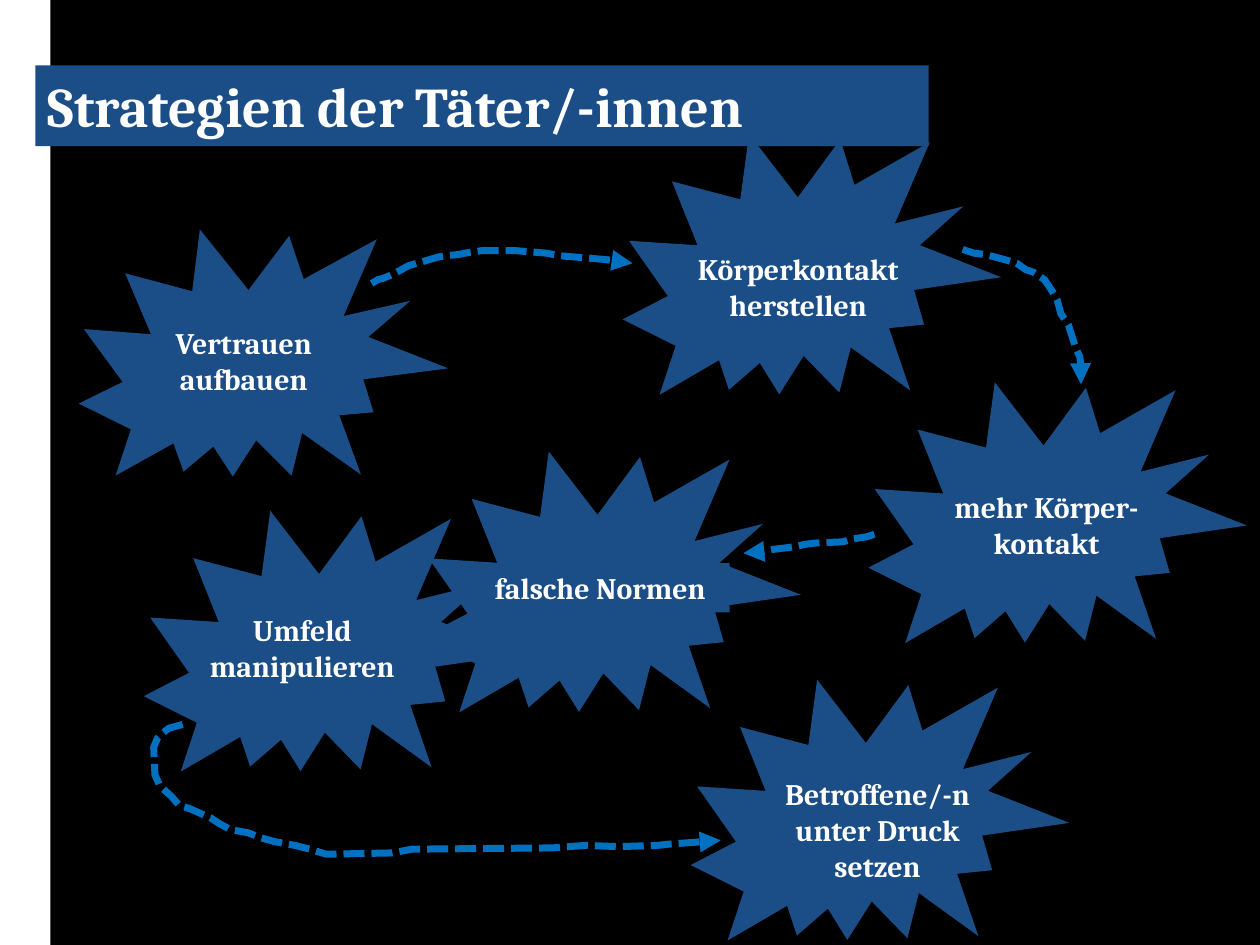
from lxml import etree
from pptx import Presentation
from pptx.dml.color import RGBColor
from pptx.enum.dml import MSO_LINE
from pptx.enum.shapes import MSO_SHAPE
from pptx.enum.text import MSO_ANCHOR, MSO_AUTO_SIZE, PP_ALIGN
from pptx.oxml.ns import qn
from pptx.util import Inches, Pt

RECT, BURST = MSO_SHAPE.RECTANGLE, MSO_SHAPE.EXPLOSION2
LEFT, CENTER = PP_ALIGN.LEFT, PP_ALIGN.CENTER
DASH = MSO_LINE.SQUARE_DOT
FONT = "Cambria"
COLORS = {"back": "000000", "white": "FFFFFF", "blue": "1B4E87", "arrow": "0070C0"}
BIG = (2.87, 2.63)
TILT = 20.4

# burst left, top, size; label text, left, top, width, height, label fill
STEPS = [
    (0.66, 1.64, (2.82, 2.48), "Vertrauen aufbauen", (0.91, 2.53, 2.05, 0.67), None),
    (4.99, 0.86, BIG, "Körperkontakt herstellen", (5.31, 1.94, 2.05, 0.67), None),
    (6.94, 2.83, BIG, "mehr Körper-kontakt", (7.28, 3.83, 2.05, 0.67), None),
    (3.4, 3.38, BIG, "falsche Normen", (3.74, 4.47, 2.05, 0.39), "blue"),
    (1.19, 3.85, BIG, "Umfeld manipulieren", (1.3, 4.81, 2.2, 0.67), None),
    (5.53, 5.19, BIG, "Betroffene/-n unter Druck setzen", (5.94, 6.11, 2.05, 0.96), None),
]

# points along each arrow, in hundredths of an inch
ARROWS = [
    [(295, 225), (300, 222), (304, 221), (309, 219), (317, 215), (324, 211),
     (331, 209), (348, 204), (354, 203), (364, 202), (369, 201), (382, 199),
     (410, 199), (434, 201), (444, 203), (480, 206), (488, 207), (502, 209)],
    [(764, 198), (773, 201), (782, 202), (797, 206), (807, 209), (814, 214),
     (820, 216), (829, 222), (835, 231), (839, 238), (842, 249), (848, 258),
     (854, 277), (857, 283), (858, 292), (858, 305)],
    [(694, 424), (688, 426), (675, 428), (669, 430), (647, 431), (639, 432),
     (630, 434), (614, 436), (605, 438), (590, 439)],
    [(145, 575), (134, 578), (129, 582), (125, 586), (122, 593), (123, 615),
     (127, 624), (136, 632), (142, 639), (151, 642), (160, 646), (167, 649),
     (173, 653), (182, 658), (186, 659), (197, 661), (207, 665), (218, 668),
     (234, 671), (246, 674), (259, 678), (311, 677), (327, 674), (438, 673),
     (465, 671), (491, 672), (522, 671), (531, 670), (559, 668), (572, 667)],
]


def rgb(name):
    return RGBColor.from_string(COLORS[name])


def add_solid(shapes, kind, box, color):
    shape = shapes.add_shape(kind, *map(Inches, box))
    shape.shadow.inherit = False
    shape.fill.solid()
    shape.fill.fore_color.rgb = rgb(color)
    shape.line.fill.background()
    return shape


def set_text(shape, text, size, align):
    frame = shape.text_frame
    frame.word_wrap = True
    frame.auto_size = MSO_AUTO_SIZE.SHAPE_TO_FIT_TEXT
    frame.vertical_anchor = MSO_ANCHOR.TOP
    frame.text = text
    line = frame.paragraphs[0]
    line.alignment = align
    font = line.runs[0].font
    font.name, font.size, font.bold = FONT, Pt(size), True
    font.color.rgb = rgb("white")


def add_step(shapes, left, top, size, text, box, fill):
    """Add a tilted burst grouped with its label."""
    group = shapes.add_group_shape().shapes
    burst = add_solid(group, BURST, (left, top, *size), "blue")
    burst.rotation = TILT
    if fill:
        label = add_solid(group, RECT, box, fill)
    else:
        label = group.add_textbox(*map(Inches, box))
    set_text(label, text, 17, CENTER)


def add_arrow(shapes, points):
    """Add a dashed open path with an arrowhead at its end."""
    path = shapes.build_freeform(*points[0], scale=Inches(0.01))
    path.add_line_segments(points[1:], close=False)
    arrow = path.convert_to_shape()
    arrow.shadow.inherit = False
    arrow.fill.background()
    line = arrow.line
    line.color.rgb = rgb("arrow")
    line.width = Pt(4)
    line.dash_style = DASH
    stroke = arrow.element.spPr.find(qn("a:ln"))
    etree.SubElement(stroke, qn("a:round"))
    etree.SubElement(stroke, qn("a:tailEnd"), type="triangle")


def main():
    deck = Presentation()
    deck.slide_width, deck.slide_height = Inches(10), Inches(7.5)
    slide = deck.slides.add_slide(deck.slide_layouts[6])
    back = slide.background.fill
    back.solid()
    back.fore_color.rgb = rgb("back")
    shapes = slide.shapes

    add_solid(shapes, RECT, (0, 0, 0.4, 7.5), "white")
    for step in STEPS:
        add_step(shapes, *step)
    for points in ARROWS:
        add_arrow(shapes, points)
    title = add_solid(shapes, RECT, (0.28, 0.52, 7.09, 0.64), "blue")
    set_text(title, "Strategien der Täter/-innen", 32, LEFT)

    deck.save("out.pptx")


if __name__ == "__main__":
    main()
